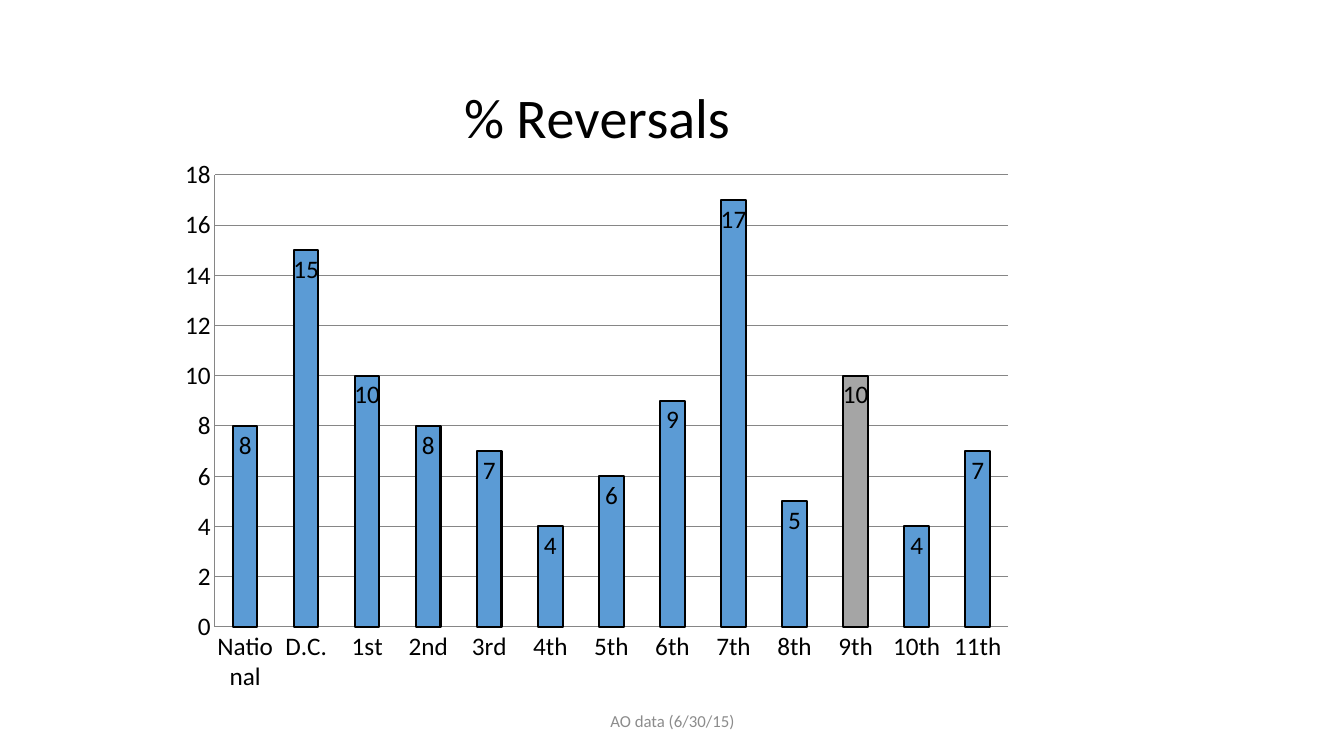
from dataclasses import dataclass

from pptx import Presentation
from pptx import util as u
from pptx.chart import data
from pptx.dml import color
from pptx.enum import chart as ch
from pptx.enum import text
from pptx.oxml import parse_xml
from pptx.oxml.ns import nsdecls


@dataclass(frozen=True)
class Theme:
    face: str = "Calibri"
    ink: str = "000000"
    fill: str = "5B9BD5"
    accent: str = "A5A5A5"
    grid: str = "868686"
    muted: str = "8C8C8C"
    head: int = 40
    body: int = 18
    note: int = 12


@dataclass(frozen=True)
class Box:
    """A rectangle in shares of the slide or of the chart."""
    x: float
    y: float
    w: float
    h: float


@dataclass(frozen=True)
class Court:
    name: str
    rate: int
    marked: bool = False


THEME = Theme()
WIDE, HIGH = u.Inches(13.33), u.Inches(7.5)
CHART = Box(1.67 / 13.33, 0.5 / 7.5, 8.5 / 13.33, 6.5 / 7.5)
PLOT = Box(0.054, 0.19, 0.926, 0.69)
NOTE = Box(4.42 / 13.33, 6.95 / 7.5, 4.5 / 13.33, 0.4 / 7.5)
COURTS = [
    Court("National", 8), Court("D.C.", 15), Court("1st", 10),
    Court("2nd", 8), Court("3rd", 7), Court("4th", 4), Court("5th", 6),
    Court("6th", 9), Court("7th", 17), Court("8th", 5),
    Court("9th", 10, marked=True), Court("10th", 4), Court("11th", 7),
]


def place(box: Box) -> tuple[int, int, int, int]:
    """Turn shares of the slide into left, top, width and height."""
    return (round(box.x * WIDE), round(box.y * HIGH),
            round(box.w * WIDE), round(box.h * HIGH))


def style(font, size: int, tint: str) -> None:
    font.name, font.size, font.bold = THEME.face, u.Pt(size), False
    font.color.rgb = color.RGBColor.from_string(tint)


def paint(form, tint: str) -> None:
    """Fill a series or point and give it the dark outline."""
    form.fill.solid()
    form.fill.fore_color.rgb = color.RGBColor.from_string(tint)
    rule(form.line, THEME.ink, 1.5)


def rule(line, tint: str, width: float) -> None:
    line.color.rgb = color.RGBColor.from_string(tint)
    line.width = u.Pt(width)


def fix_plot(chart, box: Box) -> None:
    """Pin the inner plot area to shares of the chart."""
    area = chart.element.xpath("c:chart/c:plotArea")[0]
    for old in area.xpath("c:layout"):
        area.remove(old)
    sides = "".join(f'<c:{key} val="{getattr(box, key)}"/>' for key in "xywh")
    area.insert(0, parse_xml(
        f'<c:layout {nsdecls("c")}><c:manualLayout>'
        '<c:layoutTarget val="inner"/><c:xMode val="edge"/>'
        f'<c:yMode val="edge"/>{sides}</c:manualLayout></c:layout>'))


def add_bars(slide, courts: list[Court]) -> None:
    table = data.CategoryChartData(number_format="General")
    table.categories = [court.name for court in courts]
    table.add_series("Series 1", [court.rate for court in courts])
    chart = slide.shapes.add_chart(
        ch.XL_CHART_TYPE.COLUMN_CLUSTERED, *place(CHART), table).chart
    style(chart.font, THEME.body, THEME.ink)
    chart.has_legend = False
    chart.has_title = True
    chart.chart_title.include_in_layout = False
    title = chart.chart_title.text_frame.paragraphs[0]
    title.text = "% Reversals"
    style(title.font, THEME.head, THEME.ink)

    for axis in (chart.category_axis, chart.value_axis):
        axis.major_tick_mark = axis.minor_tick_mark = ch.XL_TICK_MARK.NONE
        rule(axis.format.line, THEME.grid, 0.75)
    scale = chart.value_axis
    scale.minimum_scale, scale.maximum_scale, scale.major_unit = 0, 18, 2
    scale.has_major_gridlines = True
    rule(scale.major_gridlines.format.line, THEME.grid, 0.75)

    plot = chart.plots[0]
    plot.gap_width, plot.vary_by_categories = 150, False
    bars = plot.series[0]
    paint(bars.format, THEME.fill)
    for spot, court in enumerate(courts):
        if court.marked:
            paint(bars.points[spot].format, THEME.accent)
    tags = bars.data_labels
    tags.show_value = True
    tags.position = ch.XL_LABEL_POSITION.INSIDE_END
    style(tags.font, THEME.body, THEME.ink)
    fix_plot(chart, PLOT)


def add_note(slide, words: str) -> None:
    frame = slide.shapes.add_textbox(*place(NOTE)).text_frame
    frame.word_wrap = True
    frame.vertical_anchor = text.MSO_ANCHOR.MIDDLE
    line = frame.paragraphs[0]
    line.text = words
    line.alignment = text.PP_ALIGN.CENTER
    style(line.font, THEME.note, THEME.muted)


def main() -> None:
    deck = Presentation()
    deck.slide_width, deck.slide_height = WIDE, HIGH
    slide = deck.slides.add_slide(deck.slide_layouts[6])
    add_bars(slide, COURTS)
    add_note(slide, "AO data (6/30/15)")
    deck.save("out.pptx")


if __name__ == "__main__":
    main()
